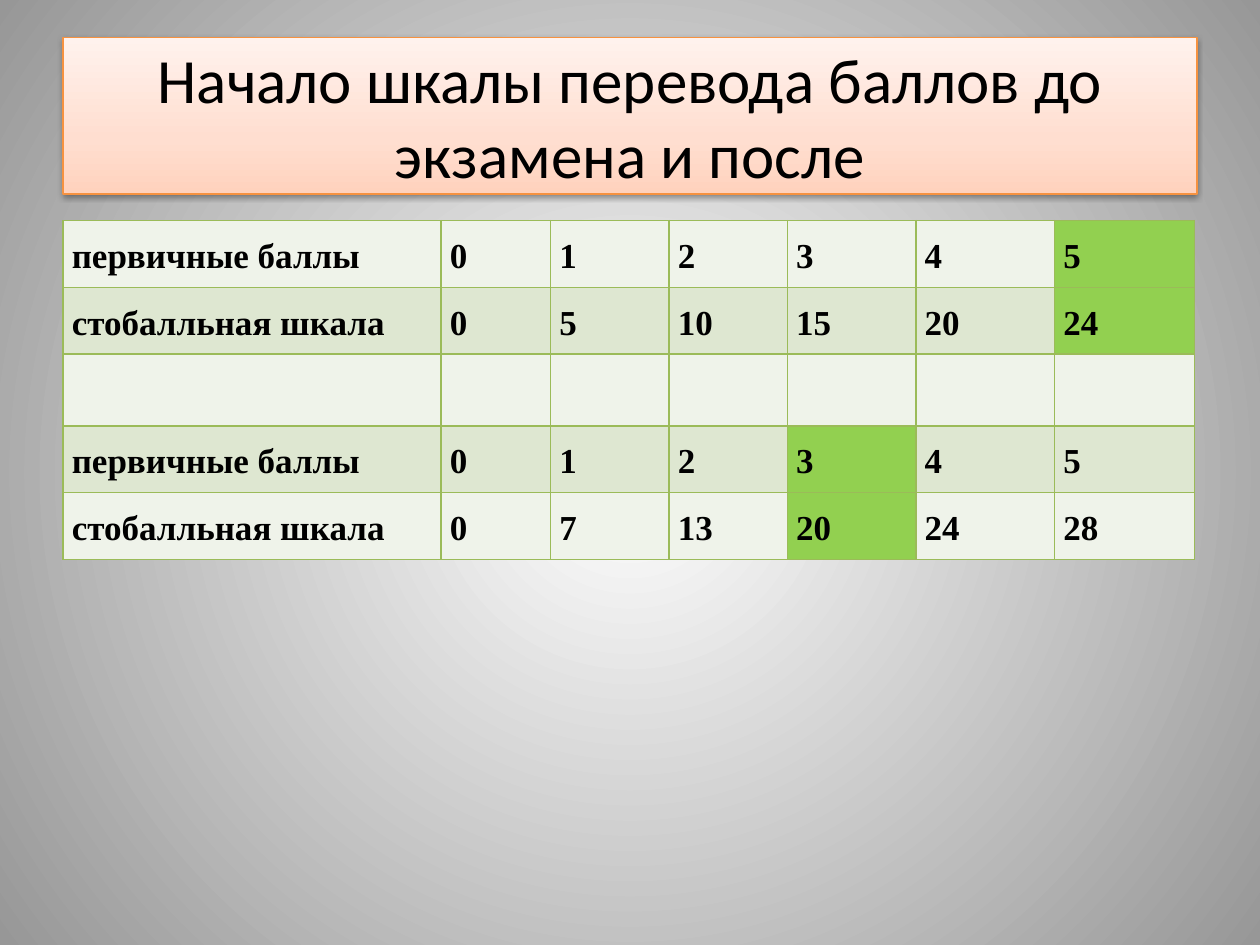
from pptx import Presentation
from pptx.dml.color import RGBColor
from pptx.enum.shapes import MSO_SHAPE
from pptx.enum.text import MSO_ANCHOR, PP_ALIGN
from pptx.oxml import parse_xml
from pptx.oxml.ns import nsdecls, qn
from pptx.util import Inches, Pt

RECT = MSO_SHAPE.RECTANGLE
MIDDLE = MSO_ANCHOR.MIDDLE
CENTER = PP_ALIGN.CENTER

COLORS = {
    "text": "000000", "edge": "F69240", "grid": "9BBB59",
    "light": "EFF3EA", "dark": "DEE7D1", "mark": "92D050",
}
BACK = [(0, "FFFFFF"), (100, "979797")]
PEACH = [(0, "FFD2BD"), (35, "FFDED0"), (100, "FFF2ED")]
RADIAL = ('<a:path path="circle"><a:fillToRect l="50000" t="50000" '
          'r="50000" b="50000"/></a:path>')
UPWARD = '<a:lin ang="16200000" scaled="0"/>'

COLS = [3, 0.87, 0.94, 0.94, 1.02, 1.1, 1.11]
ROWS = [0.53, 0.53, 0.57, 0.53, 0.53]
RAW, SCALED = "первичные баллы", "стобалльная шкала"
SCORES = [
    [RAW, 0, 1, 2, 3, 4, 5],
    [SCALED, 0, 5, 10, 15, 20, 24],
    [""] * len(COLS),
    [RAW, 0, 1, 2, 3, 4, 5],
    [SCALED, 0, 7, 13, 20, 24, 28],
]
MARKED = {(0, 6), (1, 6), (3, 4), (4, 4)}


def color(name):
    return RGBColor.from_string(COLORS[name])


def blend(fill, owner, stops, shade):
    """Give fill, which lies inside the element owner, a gradient."""
    fill.gradient()
    old = owner.find(".//" + qn("a:gradFill"))
    marks = "".join(f'<a:gs pos="{pos * 1000}"><a:srgbClr val="{rgb}"/></a:gs>'
                    for pos, rgb in stops)
    new = parse_xml(f'<a:gradFill {nsdecls("a")} rotWithShape="1">'
                    f'<a:gsLst>{marks}</a:gsLst>{shade}</a:gradFill>')
    old.getparent().replace(old, new)


class Deck:
    def __init__(self):
        self.prs = Presentation()
        self.prs.slide_width, self.prs.slide_height = Inches(10), Inches(7.5)
        self.slide = self.prs.slides.add_slide(self.prs.slide_layouts[6])
        blend(self.slide.background.fill, self.slide._element, BACK, RADIAL)

    def font(self, para, face, size, bold=False):
        font = para.font
        font.name, font.size, font.bold = face, Pt(size), bold
        font.color.rgb = color("text")

    def title(self, text, left, top, width, height):
        box = self.slide.shapes.add_shape(
            RECT, Inches(left), Inches(top), Inches(width), Inches(height))
        blend(box.fill, box._element, PEACH, UPWARD)
        box.line.color.rgb = color("edge")
        box.line.width = Pt(0.75)
        self.shadow(box)
        frame = box.text_frame
        frame.word_wrap = True
        frame.vertical_anchor = MIDDLE
        para = frame.paragraphs[0]
        para.text = text
        para.alignment = CENTER
        self.font(para, "Calibri", 36)

    def shadow(self, box):
        box.shadow.inherit = False
        box._element.spPr.find(qn("a:effectLst")).append(parse_xml(
            f'<a:outerShdw {nsdecls("a")} blurRad="{Pt(3.1)}" dist="{Pt(1.6)}" '
            'dir="5400000" rotWithShape="0"><a:srgbClr val="000000">'
            '<a:alpha val="38000"/></a:srgbClr></a:outerShdw>'))

    def table(self, data, left, top):
        grid = self.slide.shapes.add_table(
            len(ROWS), len(COLS), Inches(left), Inches(top),
            Inches(sum(COLS)), Inches(sum(ROWS))).table
        for col, width in zip(grid.columns, COLS):
            col.width = Inches(width)
        for row, height in zip(grid.rows, ROWS):
            row.height = Inches(height)
        for y, line in enumerate(data):
            for x, value in enumerate(line):
                band = "dark" if y % 2 else "light"
                self.cell(grid.cell(y, x), str(value),
                          "mark" if (y, x) in MARKED else band)

    def cell(self, cell, text, fill):
        cell.fill.solid()
        cell.fill.fore_color.rgb = color(fill)
        cell.vertical_anchor = MIDDLE
        cell.margin_left = cell.margin_right = Inches(0.07)
        cell.margin_top = cell.margin_bottom = 0
        para = cell.text_frame.paragraphs[0]
        para.text = text
        para.line_spacing = 1.15
        self.font(para, "Times New Roman", 20, True)
        self.border(cell)

    def border(self, cell):
        props = cell._tc.get_or_add_tcPr()
        for i, side in enumerate("LRTB"):
            props.insert(i, parse_xml(
                f'<a:ln{side} {nsdecls("a")} w="{Pt(1)}"><a:solidFill>'
                f'<a:srgbClr val="{COLORS["grid"]}"/></a:solidFill></a:ln{side}>'))


def main():
    deck = Deck()
    deck.title("Начало шкалы перевода баллов до экзамена и после",
               0.5, 0.3, 9, 1.24)
    deck.table(SCORES, 0.5, 1.75)
    deck.prs.save("out.pptx")


if __name__ == "__main__":
    main()
